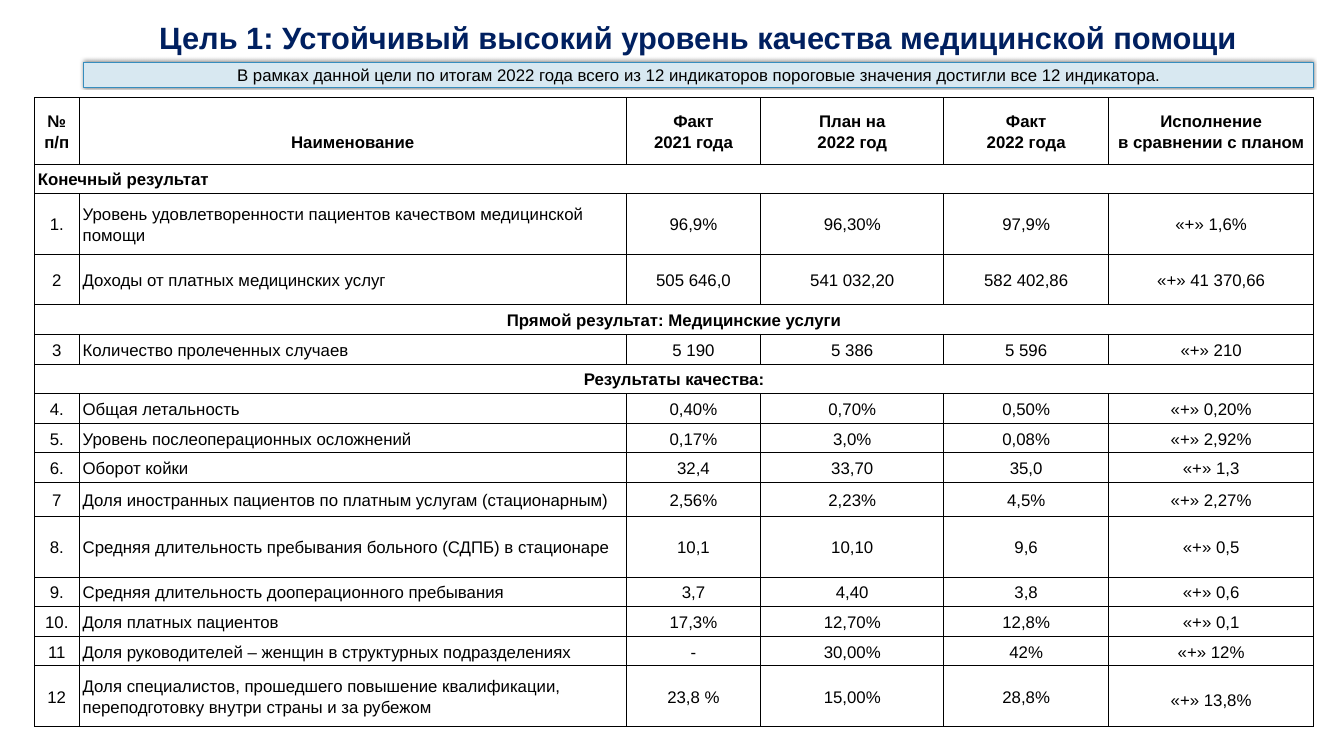
import pptx
import pptx.dml.color
import pptx.enum.shapes
import pptx.enum.text
import pptx.oxml
import pptx.oxml.ns
import pptx.util

Pt = pptx.util.Pt
ALIGN = pptx.enum.text.PP_ALIGN
MIDDLE = pptx.enum.text.MSO_ANCHOR.MIDDLE
COLORS = {"title": "002060", "text": "000000", "border": "000000",
          "banner": "D8E8F1", "banner_line": "368DBE", "shadow": "000000"}
NAMESPACE = pptx.oxml.ns.nsdecls("a")

COLUMN_WIDTHS = [64.1, 781.2, 192.2, 261.4, 235.4, 293]
LINE_HEIGHT = 42.25
TALL_HEIGHT = 86.4
ROW_HEIGHTS = {0: 95, 2: TALL_HEIGHT, 3: 72.7, 10: 49, 11: TALL_HEIGHT, 15: TALL_HEIGHT}
HEADER_DROP = 32

INDICATORS = [
    ("№ п/п", "Наименование", "Факт\n2021 года", "План на\n2022 год", "Факт\n2022 года",
     "Исполнение\nв сравнении с планом"),
    ("Конечный результат",),
    ("1.", "Уровень удовлетворенности пациентов качеством медицинской помощи",
     "96,9%", "96,30%", "97,9%", "«+» 1,6%"),
    ("2", "Доходы от платных медицинских услуг",
     "505 646,0", "541 032,20", "582 402,86", "«+» 41 370,66"),
    ("Прямой результат: Медицинские услуги",),
    ("3", "Количество пролеченных случаев", "5 190", "5 386", "5 596", "«+» 210"),
    ("Результаты качества:",),
    ("4.", "Общая летальность", "0,40%", "0,70%", "0,50%", "«+» 0,20%"),
    ("5.", "Уровень послеоперационных осложнений", "0,17%", "3,0%", "0,08%", "«+» 2,92%"),
    ("6.", "Оборот койки", "32,4", "33,70", "35,0", "«+» 1,3"),
    ("7", "Доля иностранных пациентов по платным услугам (стационарным)",
     "2,56%", "2,23%", "4,5%", "«+» 2,27%"),
    ("8.", "Средняя длительность пребывания больного (СДПБ) в стационаре",
     "10,1", "10,10", "9,6", "«+» 0,5"),
    ("9.", "Средняя длительность дооперационного пребывания", "3,7", "4,40", "3,8", "«+» 0,6"),
    ("10.", "Доля платных пациентов", "17,3%", "12,70%", "12,8%", "«+» 0,1"),
    ("11", "Доля руководителей – женщин в структурных подразделениях",
     "-", "30,00%", "42%", "«+» 12%"),
    ("12", "Доля специалистов, прошедшего повышение квалификации, "
     "переподготовку внутри страны и за рубежом", "23,8 %", "15,00%", "28,8%", "«+» 13,8%"),
]


class SlideBuilder:
    """Holds the text style and the current slide and adds elements to it."""

    def __init__(self, slide, font_name="Arial", font_size=24):
        self.slide = slide
        self.font_name = font_name
        self.font_size = font_size

    def set_attributes(self, target, values):
        for name, value in values.items():
            setattr(target, name, value)

    def fill_text(self, text_frame, text, color="text", size=None, bold=False,
                  alignment=ALIGN.CENTER, line_spacing=1.0):
        text_frame.text = text
        for paragraph in text_frame.paragraphs:
            self.set_attributes(paragraph, {"alignment": alignment, "line_spacing": line_spacing})
            font = paragraph.runs[0].font
            self.set_attributes(font, {"name": self.font_name, "bold": bold,
                                       "size": Pt(size or self.font_size)})
            font.color.rgb = pptx.dml.color.RGBColor.from_string(COLORS[color])

    def add_title(self, text, left, top, width, height):
        title = self.slide.shapes.title
        self.set_attributes(title, {"left": Pt(left), "top": Pt(top),
                                    "width": Pt(width), "height": Pt(height)})
        self.set_attributes(title.text_frame, {
            "word_wrap": True, "vertical_anchor": MIDDLE,
            "auto_size": pptx.enum.text.MSO_AUTO_SIZE.NONE})
        self.fill_text(title.text_frame, text, color="title", size=44, bold=True)

    def add_banner(self, text, left, top, width, height):
        banner = self.slide.shapes.add_shape(
            pptx.enum.shapes.MSO_SHAPE.RECTANGLE, Pt(left), Pt(top), Pt(width), Pt(height))
        banner.fill.solid()
        banner.fill.fore_color.rgb = pptx.dml.color.RGBColor.from_string(COLORS["banner"])
        banner.line.color.rgb = pptx.dml.color.RGBColor.from_string(COLORS["banner_line"])
        banner.line.width = Pt(0.75)
        banner.shadow.inherit = False
        effects = banner._element.spPr.find(pptx.oxml.ns.qn("a:effectLst"))
        effects.append(pptx.oxml.parse_xml(
            f'<a:outerShdw {NAMESPACE} blurRad="{Pt(5)}" dist="{Pt(2)}" dir="{245 * 60000}" '
            f'rotWithShape="0"><a:srgbClr val="{COLORS["shadow"]}"><a:alpha val="50000"/>'
            '</a:srgbClr></a:outerShdw>'))
        self.set_attributes(banner.text_frame, {"word_wrap": True, "vertical_anchor": MIDDLE})
        self.fill_text(banner.text_frame, text)

    def add_borders(self, cell):
        properties = cell._tc.get_or_add_tcPr()
        for position, side in enumerate(("lnL", "lnR", "lnT", "lnB")):
            properties.insert(position, pptx.oxml.parse_xml(
                f'<a:{side} {NAMESPACE} w="{Pt(1)}"><a:solidFill>'
                f'<a:srgbClr val="{COLORS["border"]}"/></a:solidFill></a:{side}>'))

    def add_table(self, rows, left, top):
        heights = [ROW_HEIGHTS.get(index, LINE_HEIGHT) for index in range(len(rows))]
        table = self.slide.shapes.add_table(
            len(rows), len(COLUMN_WIDTHS), Pt(left), Pt(top),
            Pt(sum(COLUMN_WIDTHS)), Pt(sum(heights))).table
        self.set_attributes(table, {"first_row": False, "horz_banding": False})
        for column, width in zip(table.columns, COLUMN_WIDTHS):
            column.width = Pt(width)
        for row_index, (row, values, height) in enumerate(zip(table.rows, rows, heights)):
            row.height = Pt(height)
            is_section = len(values) == 1
            is_header = row_index == 0
            for cell in row.cells:
                cell.fill.background()
                self.add_borders(cell)
                self.set_attributes(cell, {
                    "margin_left": Pt(5), "margin_right": Pt(5), "margin_top": 0,
                    "margin_bottom": 0, "vertical_anchor": MIDDLE})
            if is_section:
                table.cell(row_index, 0).merge(table.cell(row_index, len(COLUMN_WIDTHS) - 1))
            for column_index, (cell, text) in enumerate(zip(row.cells, values)):
                is_left = row_index == 1 or (column_index == 1 and not is_header)
                self.fill_text(cell.text_frame, text, bold=is_header or is_section,
                               alignment=ALIGN.LEFT if is_left else ALIGN.CENTER,
                               line_spacing=1.15)
        table.cell(0, 1).margin_top = Pt(HEADER_DROP)
        table.cell(len(rows) - 1, 5).text_frame.paragraphs[0].line_spacing = 1.5


def main():
    presentation = pptx.Presentation()
    presentation.slide_width = Pt(1919.5)
    presentation.slide_height = Pt(1080)
    builder = SlideBuilder(presentation.slides.add_slide(presentation.slide_layouts[5]))
    builder.add_title("Цель 1: Устойчивый высокий уровень качества медицинской помощи",
                      216.7, 28, 1562.4, 50.4)
    builder.add_table(INDICATORS, 49, 139)
    builder.add_banner("В рамках данной цели по итогам 2022 года всего из 12 индикаторов "
                       "пороговые значения достигли все 12 индикатора.", 119.5, 88.6, 1756.8, 36)
    presentation.save("out.pptx")


if __name__ == "__main__":
    main()
